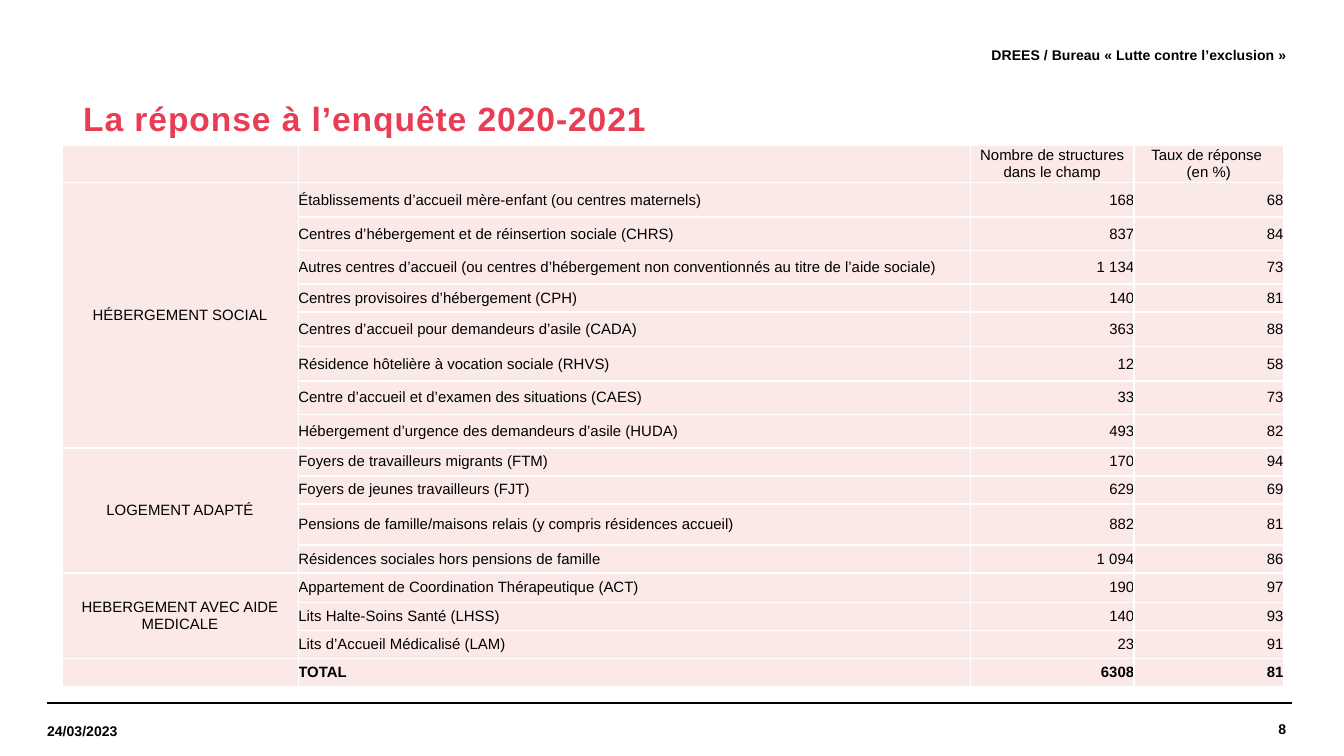
from lxml.etree import SubElement
from pptx import Presentation
from pptx.dml.color import RGBColor
from pptx.enum.shapes import MSO_CONNECTOR
from pptx.enum.text import MSO_ANCHOR, PP_ALIGN
from pptx.oxml.ns import qn
from pptx.util import Inches, Pt

BLACK = RGBColor(0x00, 0x00, 0x00)
WHITE = RGBColor(0xFF, 0xFF, 0xFF)
RED = RGBColor(0xE8, 0x3D, 0x54)
PINK = RGBColor(0xFB, 0xE9, 0xE8)
FONT = "Arial"

TITLE = "La réponse à l’enquête 2020-2021"
PAGE_TEXTS = [
    ("8", 8.09, 5.23, 1.48, 0.39, PP_ALIGN.RIGHT),
    ("DREES / Bureau « Lutte contre l’exclusion »", 3.14, 0.21, 6.43, 0.39, PP_ALIGN.RIGHT),
    ("24/03/2023", 0.35, 5.25, 1.28, 0.38, PP_ALIGN.LEFT),
]
HEADERS = ["", "", "Nombre de structures dans le champ", "Taux de réponse \n(en %)"]
GROUPS = [
    ("HÉBERGEMENT SOCIAL", [
        ("Établissements d’accueil mère-enfant (ou centres maternels)", "168", "68", 0.26),
        ("Centres d’hébergement et de réinsertion sociale (CHRS)", "837", "84", 0.25),
        ("Autres centres d’accueil (ou centres d’hébergement non conventionnés"
         " au titre de l’aide sociale)", "1 134", "73", 0.25),
        ("Centres provisoires d’hébergement (CPH)", "140", "81", 0.21),
        ("Centres d’accueil pour demandeurs d’asile (CADA)", "363", "88", 0.26),
        ("Résidence hôtelière à vocation sociale (RHVS)", "12", "58", 0.26),
        ("Centre d’accueil et d’examen des situations (CAES)", "33", "73", 0.25),
        ("Hébergement d’urgence des demandeurs d’asile (HUDA)", "493", "82", 0.25),
    ]),
    ("LOGEMENT ADAPTÉ", [
        ("Foyers de travailleurs migrants (FTM)", "170", "94", 0.21),
        ("Foyers de jeunes travailleurs (FJT)", "629", "69", 0.21),
        ("Pensions de famille/maisons relais (y compris résidences accueil)", "882", "81", 0.31),
        ("Résidences sociales hors pensions de famille", "1 094", "86", 0.21),
    ]),
    ("HEBERGEMENT AVEC AIDE MEDICALE", [
        ("Appartement de Coordination Thérapeutique (ACT)", "190", "97", 0.22),
        ("Lits Halte-Soins Santé (LHSS)", "140", "93", 0.21),
        ("Lits d’Accueil Médicalisé (LAM)", "23", "91", 0.21),
    ]),
    ("", [("TOTAL", "6308", "81", 0.21)]),
]
HEADER_HEIGHT = 0.28
TABLE_HEIGHT = 4.03
COLUMN_WIDTHS = [1.76, 5, 1.22, 1.11]
COLUMN_ALIGNMENTS = [PP_ALIGN.CENTER, PP_ALIGN.LEFT, PP_ALIGN.RIGHT, PP_ALIGN.RIGHT]


def format_text(text_frame, size, color, bold, alignment):
    for paragraph in text_frame.paragraphs:
        paragraph.alignment = alignment
        for run in paragraph.runs:
            run.font.name = FONT
            run.font.size = Pt(size)
            run.font.bold = bold
            run.font.color.rgb = color
        if not paragraph.runs:
            SubElement(paragraph._p, qn("a:endParaRPr"), sz=str(size * 100))


def add_text(slide, text, left, top, width, height, size, color, alignment, margin=0):
    box = slide.shapes.add_textbox(Inches(left), Inches(top), Inches(width), Inches(height))
    frame = box.text_frame
    frame.word_wrap = True
    frame.vertical_anchor = MSO_ANCHOR.MIDDLE
    frame.margin_left = frame.margin_right = Inches(margin)
    frame.margin_top = frame.margin_bottom = Inches(margin / 2)
    frame.text = text
    format_text(frame, size, color, True, alignment)
    return frame.paragraphs[0]


def add_rule(slide, left):
    line = slide.shapes.add_connector(
        MSO_CONNECTOR.STRAIGHT, Inches(left), Inches(5.23), Inches(left + 9.22), Inches(5.23))
    line.line.color.rgb = BLACK
    line.line.width = Pt(0.8)
    SubElement(line._element.spPr, qn("a:effectLst"))


def fill_cell(cell, text, alignment, bold):
    cell.margin_left = cell.margin_right = cell.margin_top = cell.margin_bottom = 0
    cell.vertical_anchor = MSO_ANCHOR.MIDDLE
    properties = cell._tc.get_or_add_tcPr()
    for side in ("a:lnL", "a:lnR", "a:lnT", "a:lnB"):
        border = SubElement(properties, qn(side), w=str(Pt(1)))
        SubElement(SubElement(border, qn("a:solidFill")), qn("a:srgbClr"), val=str(WHITE))
    cell.fill.solid()
    cell.fill.fore_color.rgb = PINK
    cell.text_frame.text = text
    format_text(cell.text_frame, 8, BLACK, bold, alignment)


def add_response_table(slide):
    rows = [(HEADERS, HEADER_HEIGHT)]
    merges = []
    for group, members in GROUPS:
        merges.append((len(rows), len(rows) + len(members) - 1))
        for index, (label, count, rate, height) in enumerate(members):
            rows.append(([group if index == 0 else "", label, count, rate], height))

    scale = TABLE_HEIGHT / sum(height for _, height in rows)
    table = slide.shapes.add_table(
        len(rows), len(COLUMN_WIDTHS), Inches(0.46), Inches(1.08),
        Inches(sum(COLUMN_WIDTHS)), Inches(TABLE_HEIGHT)).table
    table.first_row = False
    table.horz_banding = False
    for column, width in zip(table.columns, COLUMN_WIDTHS):
        column.width = Inches(width)
    for row_index, (texts, height) in enumerate(rows):
        table.rows[row_index].height = Inches(height * scale)
        for column_index, text in enumerate(texts):
            alignment = PP_ALIGN.CENTER if row_index == 0 else COLUMN_ALIGNMENTS[column_index]
            bold = row_index == len(rows) - 1
            fill_cell(table.cell(row_index, column_index), text, alignment, bold)
    for first, last in merges:
        if last > first:
            table.cell(first, 0).merge(table.cell(last, 0))


def main():
    presentation = Presentation()
    presentation.slide_width = Inches(10)
    presentation.slide_height = presentation.slide_width * 9 // 16
    slide = presentation.slides.add_slide(presentation.slide_layouts[6])

    for left in (0.35, 0.39):
        add_rule(slide, left)
    for text, left, top, width, height, alignment in PAGE_TEXTS:
        add_text(slide, text, left, top, width, height, 7.5, BLACK, alignment)

    title = add_text(slide, TITLE, 0.5, 0.6, 9.21, 0.59, 18, RED, PP_ALIGN.LEFT, 0.1)
    title.line_spacing = 0.9
    title._p.get_or_add_pPr().set("marL", str(Inches(0.02)))
    title.runs[0].font._element.set("spc", "50")

    add_response_table(slide)
    presentation.save("out.pptx")


if __name__ == "__main__":
    main()
